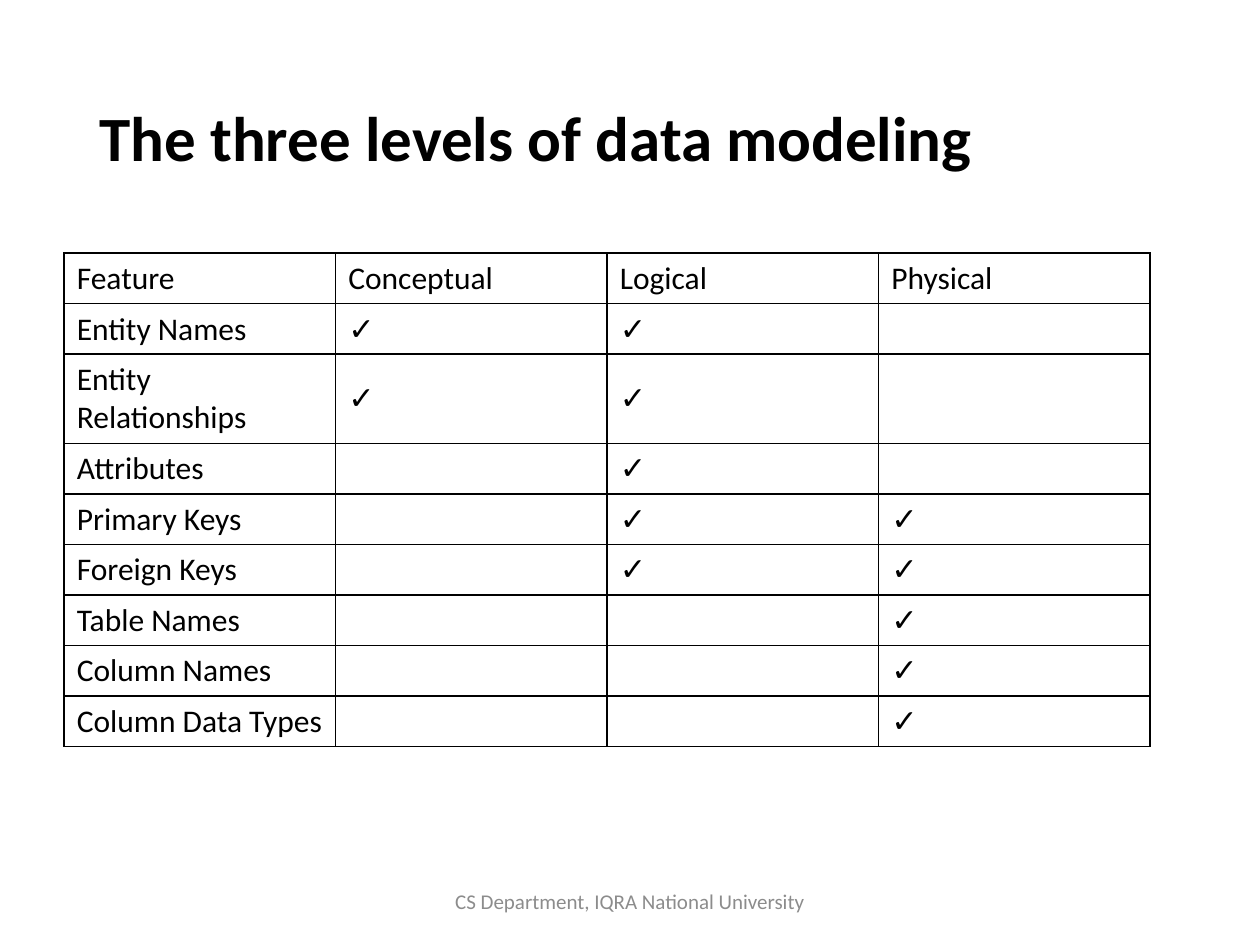
from dataclasses import dataclass
from lxml.etree import SubElement
from pptx import Presentation
from pptx.dml.color import RGBColor
from pptx.enum.text import MSO_ANCHOR, MSO_AUTO_SIZE, PP_ALIGN
from pptx.oxml.ns import qn
from pptx.util import Inches, Pt


@dataclass(frozen=True)
class Theme:
    font: str = "Calibri"
    ink: str = "000000"
    gray: str = "8C8C8C"
    head: int = 36
    body: int = 18
    foot: int = 12
    rule: int = 1


THEME = Theme()
WIDE, HIGH = Inches(10), Inches(7.5)
TICK = "✓"
LEVELS = ("Conceptual", "Logical", "Physical")
MARKS = (
    ("Entity Names", "CL"),
    ("Entity Relationships", "CL"),
    ("Attributes", "L"),
    ("Primary Keys", "LP"),
    ("Foreign Keys", "LP"),
    ("Table Names", "P"),
    ("Column Names", "P"),
    ("Column Data Types", "P"),
)


def place(left, top, width, height):
    return (int(WIDE * left), int(HIGH * top),
            int(WIDE * width), int(HIGH * height))


def write(frame, text, size, color, bold=False, align=PP_ALIGN.LEFT):
    frame.text = text
    frame.word_wrap = True
    line = frame.paragraphs[0]
    line.alignment = align
    for run in line.runs:
        run.font.name = THEME.font
        run.font.size = Pt(size)
        run.font.bold = bold
        run.font.color.rgb = RGBColor.from_string(color)


def add_title(slide, text):
    title = slide.shapes.title
    title.left, title.top, title.width, title.height = place(
        0.069, 0.053, 0.862, 0.193)
    frame = title.text_frame
    write(frame, text, THEME.head, THEME.ink, bold=True)
    frame.auto_size = MSO_AUTO_SIZE.NONE
    frame.vertical_anchor = MSO_ANCHOR.MIDDLE
    frame.paragraphs[0].line_spacing = 0.9


def add_foot(slide, text):
    box = slide.shapes.add_textbox(*place(0.331, 0.927, 0.338, 0.053))
    write(box.text_frame, text, THEME.foot, THEME.gray, align=PP_ALIGN.CENTER)
    box.text_frame.vertical_anchor = MSO_ANCHOR.MIDDLE


def add_rules(cell):
    props = cell._tc.get_or_add_tcPr()
    for spot, side in enumerate(("lnL", "lnR", "lnT", "lnB")):
        edge = SubElement(props, qn(f"a:{side}"), w=str(Pt(THEME.rule)))
        fill = SubElement(edge, qn("a:solidFill"))
        SubElement(fill, qn("a:srgbClr"), val=THEME.ink)
        props.insert(spot, edge)


def add_grid(slide, rows):
    frame = slide.shapes.add_table(
        len(rows), len(rows[0]), *place(0.051, 0.268, 0.862, 0.52))
    table = frame.table
    table.first_row = table.horz_banding = False
    for row, texts in zip(table.rows, rows):
        row.height = Inches(0.4)
        for cell, text in zip(row.cells, texts):
            write(cell.text_frame, text, THEME.body, THEME.ink)
            cell.vertical_anchor = MSO_ANCHOR.MIDDLE
            cell.fill.background()
            add_rules(cell)
    table.rows[2].height = Inches(0.71)


def main():
    deck = Presentation()
    deck.slide_width, deck.slide_height = WIDE, HIGH
    slide = deck.slides.add_slide(deck.slide_layouts[5])
    add_title(slide, "The three levels of data modeling")
    add_foot(slide, "CS Department, IQRA National University")
    rows = [("Feature", *LEVELS)]
    for name, marks in MARKS:
        rows.append((name, *(TICK if level[0] in marks else ""
                             for level in LEVELS)))
    add_grid(slide, rows)
    deck.save("out.pptx")


if __name__ == "__main__":
    main()
